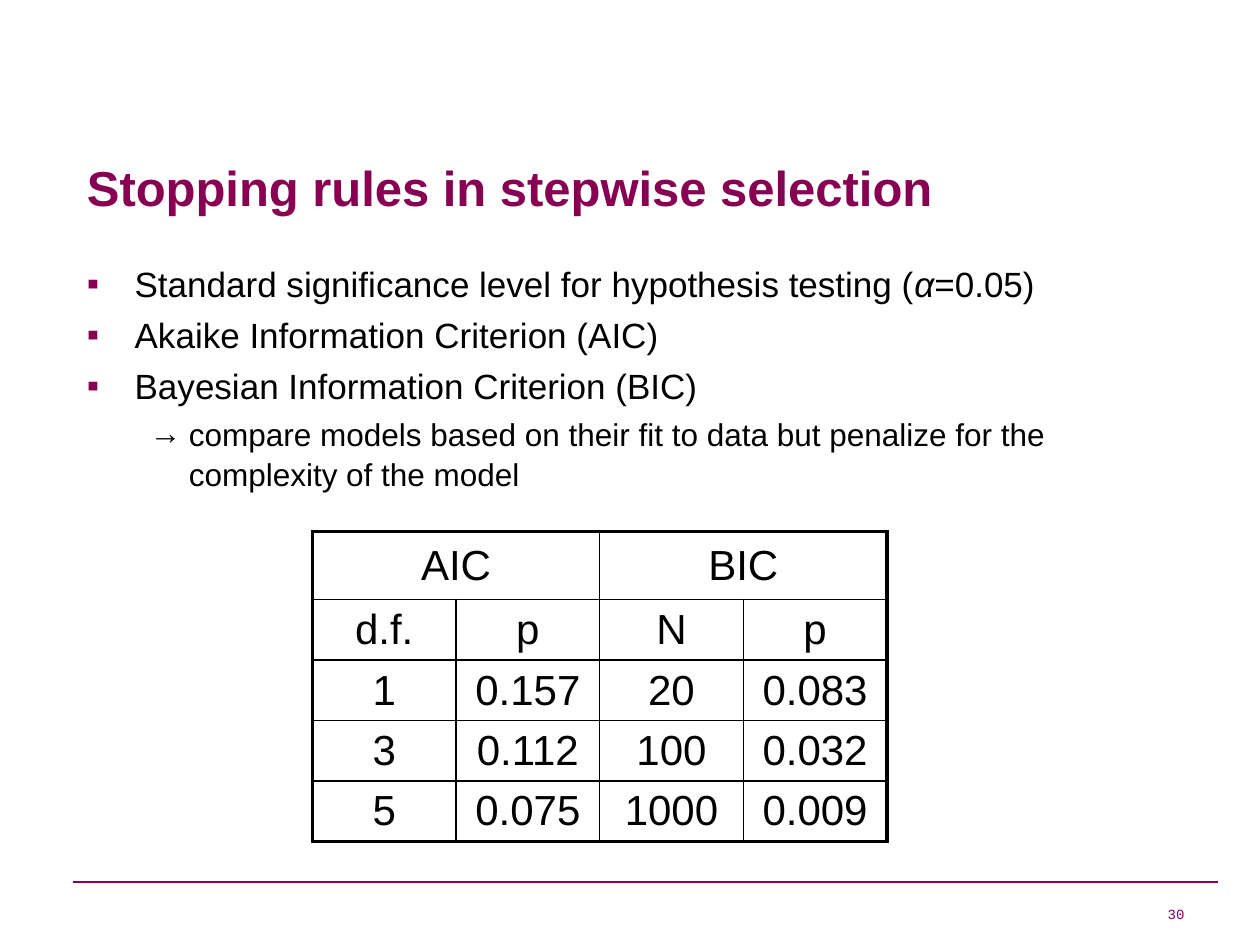
from dataclasses import dataclass

import lxml.etree
import pptx
import pptx.dml.color
import pptx.enum.shapes
import pptx.enum.text
import pptx.oxml.ns
import pptx.util
from pptx.util import Inches, Pt

PLUM = "870052"
BLACK = "000000"
FONT = "Arial"


@dataclass(frozen=True)
class Bullet:
    runs: tuple[tuple[str, bool], ...]
    symbol: str = "▪"
    color: str = PLUM
    level: int = 0
    size: float = 20
    margin: float = 0.38
    hanging: float = 0.38


BULLETS = (
    Bullet((
        ("Standard significance level for hypothesis testing (", False),
        ("α", True),
        ("=0.05)", False),
    )),
    Bullet((("Akaike Information Criterion (AIC)", False),)),
    Bullet((("Bayesian Information Criterion (BIC)", False),)),
    Bullet(
        ((
            "compare models based on their fit to data but penalize "
            "for the complexity of the model",
            False,
        ),),
        symbol="→", color=BLACK, level=1, size=18, margin=0.81, hanging=0.31,
    ),
)

CRITERIA = (
    ("AIC", "", "BIC", ""),
    ("d.f.", "p", "N", "p"),
    ("1", "0.157", "20", "0.083"),
    ("3", "0.112", "100", "0.032"),
    ("5", "0.075", "1000", "0.009"),
)


def rgb(color: str) -> pptx.dml.color.RGBColor:
    return pptx.dml.color.RGBColor.from_string(color)


def add_element(parent, tag: str, **attributes: str):
    return lxml.etree.SubElement(parent, pptx.oxml.ns.qn(tag), attributes)


def set_font(paragraph, size: float, color: str = BLACK, name: str = FONT, bold: bool = False) -> None:
    font = paragraph.font
    font.name = name
    font.size = Pt(size)
    font.bold = bold
    font.color.rgb = rgb(color)


def set_title(slide) -> None:
    title = slide.shapes.title
    title.left, title.top = Inches(0.59), Inches(1.15)
    title.width, title.height = Inches(8.5), Inches(1.25)
    frame = title.text_frame
    frame.text = "Stopping rules in stepwise selection"
    frame.auto_size = pptx.enum.text.MSO_AUTO_SIZE.NONE
    frame.vertical_anchor = pptx.enum.text.MSO_ANCHOR.TOP
    frame.margin_top = Inches(0.1)
    paragraph = frame.paragraphs[0]
    paragraph.alignment = pptx.enum.text.PP_ALIGN.LEFT
    set_font(paragraph, 28, PLUM, bold=True)


def write_bullet(paragraph, bullet: Bullet) -> None:
    for text, italic in bullet.runs:
        run = paragraph.add_run()
        run.text = text
        run.font.italic = italic
    paragraph.level = bullet.level
    paragraph.space_before = Pt(bullet.size * 0.2)
    paragraph.line_spacing = 1.05
    properties = paragraph._p.get_or_add_pPr()
    properties.set("marL", str(Inches(bullet.margin)))
    properties.set("indent", str(-Inches(bullet.hanging)))
    bullet_color = add_element(properties, "a:buClr")
    add_element(bullet_color, "a:srgbClr", val=bullet.color)
    add_element(properties, "a:buFont", typeface=FONT)
    add_element(properties, "a:buChar", char=bullet.symbol)
    set_font(paragraph, bullet.size)


def add_body(slide, bullets: tuple[Bullet, ...]) -> None:
    body = slide.shapes.add_textbox(Inches(0.59), Inches(2.02), Inches(8.11), Inches(4.8))
    frame = body.text_frame
    frame.word_wrap = True
    for index, bullet in enumerate(bullets):
        paragraph = frame.add_paragraph() if index else frame.paragraphs[0]
        write_bullet(paragraph, bullet)


def set_borders(cell, outer_sides: dict[str, bool]) -> None:
    properties = cell._tc.get_or_add_tcPr()
    for index, (side, outer) in enumerate(outer_sides.items()):
        width = Pt(2.25 if outer else 1)
        border = add_element(properties, f"a:ln{side}", w=str(width))
        fill = add_element(border, "a:solidFill")
        add_element(fill, "a:srgbClr", val=BLACK)
        properties.insert(index, border)


def add_criteria_table(slide, rows: tuple[tuple[str, ...], ...]) -> None:
    row_count, column_count = len(rows), len(rows[0])
    table = slide.shapes.add_table(
        row_count, column_count, Inches(2.48), Inches(4.22), Inches(4.56), Inches(2.42)
    ).table
    table.first_row = False
    table.horz_banding = False
    for column in table.columns:
        column.width = Inches(1.14)
    for index, row in enumerate(table.rows):
        row.height = Inches(0.47 if index else 0.54)
    for column_index in range(0, column_count, 2):
        table.cell(0, column_index).merge(table.cell(0, column_index + 1))
    for row_index, values in enumerate(rows):
        for column_index, text in enumerate(values):
            cell = table.cell(row_index, column_index)
            cell.fill.background()
            cell.margin_top = cell.margin_bottom = Inches(0.04)
            cell.vertical_anchor = pptx.enum.text.MSO_ANCHOR.MIDDLE
            last_column = column_index + (2 if cell.is_merge_origin else 1)
            set_borders(cell, {
                "L": column_index == 0,
                "R": last_column >= column_count,
                "T": row_index == 0,
                "B": row_index == row_count - 1,
            })
            if not cell.is_spanned:
                cell.text = text
                paragraph = cell.text_frame.paragraphs[0]
                paragraph.alignment = pptx.enum.text.PP_ALIGN.CENTER
                set_font(paragraph, 24)


def add_footer(slide) -> None:
    rule = slide.shapes.add_connector(
        pptx.enum.shapes.MSO_CONNECTOR.STRAIGHT, Inches(0.58), Inches(7), Inches(9.67), Inches(7)
    )
    rule.line.color.rgb = rgb(PLUM)
    rule.line.width = Pt(0.75)
    add_element(rule._element.spPr, "a:effectLst")
    number = slide.shapes.add_textbox(Inches(7.17), Inches(7.14), Inches(2.33), Inches(0.22))
    frame = number.text_frame
    frame.word_wrap = True
    frame.vertical_anchor = pptx.enum.text.MSO_ANCHOR.MIDDLE
    frame.text = "30"
    paragraph = frame.paragraphs[0]
    paragraph.alignment = pptx.enum.text.PP_ALIGN.RIGHT
    set_font(paragraph, 8, "820060", "Courier New")


def main() -> None:
    presentation = pptx.Presentation()
    presentation.slide_width = Inches(10)
    presentation.slide_height = Inches(7.5)
    slide = presentation.slides.add_slide(presentation.slide_layouts[5])
    add_footer(slide)
    set_title(slide)
    add_body(slide, BULLETS)
    add_criteria_table(slide, CRITERIA)
    presentation.save("out.pptx")


if __name__ == "__main__":
    main()
